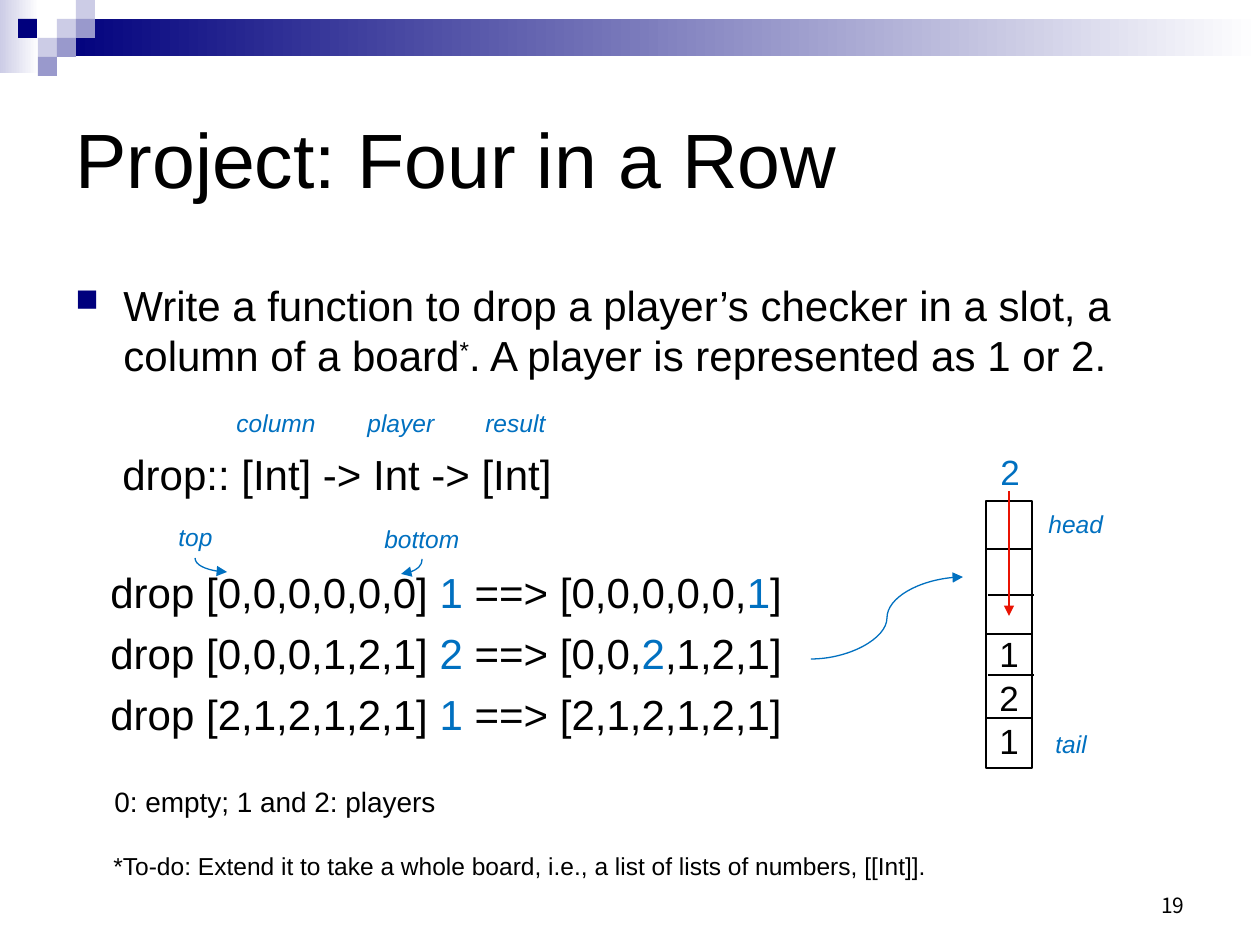
from lxml import etree
from pptx import Presentation
from pptx.dml.color import RGBColor
from pptx.enum import shapes, text
from pptx.oxml import ns
from pptx.util import Pt

PX = 914400 / 126
COLORS = {"ink": "000000", "navy": "00007D", "lilac": "CCCCE6", "violet": "9999CC",
          "white": "FFFFFF", "blue": "0070C0", "red": "E91303"}


def px(*lengths):
    return [round(length * PX) for length in lengths]


def rgb(name):
    return RGBColor.from_string(COLORS[name])


def child(parent, tag, **attributes):
    return etree.SubElement(parent, ns.qn(tag), attributes)


def add_run(paragraph, words, size, color="ink", italic=False, font="Arial"):
    run = paragraph.add_run()
    run.text = words
    run.font.size = Pt(size)
    run.font.name = font
    run.font.italic = italic
    run.font.color.rgb = rgb(color)
    return run


def add_frame(slide, box, anchor=text.MSO_ANCHOR.TOP, wrap=True):
    frame = slide.shapes.add_textbox(*px(*box)).text_frame
    frame.word_wrap = wrap
    frame.vertical_anchor = anchor
    return frame


def add_label(slide, box, words, size=14, color="blue", italic=True):
    frame = add_frame(slide, box, wrap=False)
    add_run(frame.paragraphs[0], words, size, color, italic)


def add_rect(slide, box):
    rect = slide.shapes.add_shape(shapes.MSO_SHAPE.RECTANGLE, *px(*box))
    rect.shadow.inherit = False
    return rect


def add_line(slide, start, end, color="ink", arrow=False, kind=shapes.MSO_CONNECTOR.STRAIGHT):
    line = slide.shapes.add_connector(kind, *px(*start, *end))
    line.line.color.rgb = rgb(color)
    line.line.width = Pt(0.75)
    if arrow:
        child(line.line._get_or_add_ln(), "a:tailEnd", type="triangle")
    child(line.element.spPr, "a:effectLst")
    return line


def add_hook(slide, start, end):
    hook = add_line(slide, start, end, "blue", True, shapes.MSO_CONNECTOR.CURVE)
    across, down = abs(end[0] - start[0]), end[1] - start[1]
    rightward = end[0] > start[0]
    middle = (start[0] + end[0]) / 2, (start[1] + end[1]) / 2
    hook.left, hook.top, hook.width, hook.height = px(
        middle[0] - down / 2, middle[1] - across / 2, down, across)
    xfrm = hook.element.spPr.find(ns.qn("a:xfrm"))
    xfrm.set("rot", str((270 if rightward else 90) * 60000))
    xfrm.set("flipH", "1" if rightward else "0")
    hook.element.spPr.find(ns.qn("a:prstGeom")).set("prst", "curvedConnector2")


def header(slide, box):
    left, top, width, height = box
    bands = [((0, 0, 39, 73), "lilac"), ((57, 19, width - 57, 37), "navy")]
    for (x, y, w, h), color in bands:
        band = add_rect(slide, (left + x, top + y, w, h))
        band.fill.gradient()
        band.fill.gradient_angle = 0
        for stop, shade in zip(band.fill.gradient_stops, (color, "white")):
            stop.color.rgb = rgb(shade)
        band.line.fill.background()
    tiles = [(57, 19, "lilac"), (76, 0, "lilac"), (76, 19, "violet"), (38, 38, "lilac"),
             (18, 19, "navy"), (57, 38, "violet"), (38, 57, "violet")]
    for x, y, color in tiles:
        tile = add_rect(slide, (left + x, top + y, 19, 19))
        tile.fill.solid()
        tile.fill.fore_color.rgb = rgb(color)
        tile.line.fill.background()


def title(slide, box):
    frame = add_frame(slide, box, text.MSO_ANCHOR.MIDDLE)
    add_run(frame.paragraphs[0], "Project: Four in a Row", 44)


def exercise(slide, box):
    frame = add_frame(slide, box)
    rows = [
        (48, 3, 24, [("Write a function to drop a player’s checker in a slot, a column of a board", "ink"),
                     ("*", "ink"), (". A player is represented as 1 or 2.", "ink")]),
        (47, 39, 24, [("drop:: [Int] -> Int -> [Int]", "ink")]),
        (35, 39, 24, [("drop [0,0,0,0,0,0] ", "ink"), ("1", "blue"),
                      (" ==> [0,0,0,0,0,", "ink"), ("1", "blue"), ("]", "ink")]),
        (35, 6, 24, [("drop [0,0,0,1,2,1] ", "ink"), ("2", "blue"),
                     (" ==> [0,0,", "ink"), ("2", "blue"), (",1,2,1]", "ink")]),
        (35, 6, 24, [("drop [2,1,2,1,2,1] ", "ink"), ("1", "blue"),
                     (" ==> [2,1,2,1,2,1]", "ink")]),
        (39, 26, 16, [("0: empty; 1 and 2: players", "ink")]),
    ]
    for index, (indent, before, size, pieces) in enumerate(rows):
        paragraph = frame.add_paragraph() if index else frame.paragraphs[0]
        paragraph.space_before = Pt(before)
        properties = paragraph._p.get_or_add_pPr()
        properties.set("marL", str(px(indent)[0]))
        properties.set("indent", str(px(0 if index else -indent)[0]))
        if index == 0:
            child(child(properties, "a:buClr"), "a:srgbClr", val=COLORS["navy"])
            child(properties, "a:buSzPct", val="75000")
            child(properties, "a:buChar", char="■")
        for words, color in pieces:
            run = add_run(paragraph, words, size, color)
            if words == "*":
                run.font._element.set("baseline", "30000")


def annotations(slide, box):
    left, top = box[:2]
    labels = [("column", 161, 0, 105), ("player", 292, 0, 92), ("result", 410, 0, 86),
              ("top", 103, 114, 59), ("bottom", 309, 116, 101)]
    for words, x, y, width in labels:
        add_label(slide, (left + x, top + y, width, 43), words)
    add_hook(slide, (left + 132, top + 156), (left + 164, top + 170))
    add_hook(slide, (left + 359, top + 157), (left + 338, top + 172))
    add_line(slide, (left + 748, top + 257), (left + 900, top + 175), "blue", True,
             shapes.MSO_CONNECTOR.CURVE)


def slot(slide, box):
    left, top, width, height = box
    column = add_rect(slide, box)
    column.fill.background()
    column.line.color.rgb = rgb("ink")
    column.line.width = Pt(0.75)
    frame = column.text_frame
    frame.word_wrap = False
    frame.vertical_anchor = text.MSO_ANCHOR.BOTTOM
    for index, checker in enumerate("121"):
        paragraph = frame.add_paragraph() if index else frame.paragraphs[0]
        paragraph.alignment = text.PP_ALIGN.CENTER
        paragraph.space_before = Pt(1)
        add_run(paragraph, checker, 20)
    for x, y in [(0, 48), (2, 94), (0, 133), (2, 174), (1, 217)]:
        add_line(slide, (left + x, top + y), (left + x + width, top + y))
    add_label(slide, (left + 2, top - 57, 45, 55), "2", 20, italic=False)
    add_line(slide, (left + 23, top - 10), (left + 23, top + 115), "red", True)
    add_label(slide, (left + 50, top + 2, 81, 43), "head")
    add_label(slide, (left + 57, top + 222, 57, 43), "tail")


def footer(slide, box):
    left, top, width, height = box
    add_label(slide, (left, top, 843, 43),
              "*To-do: Extend it to take a whole board, i.e., a list of lists of numbers, [[Int]].",
              color="ink", italic=False)
    frame = add_frame(slide, (left + width - 294, top + height - 63, 294, 63), text.MSO_ANCHOR.BOTTOM)
    frame.paragraphs[0].alignment = text.PP_ALIGN.RIGHT
    add_run(frame.paragraphs[0], "19", 12, font="Noto Sans CJK KR")


def main():
    deck = Presentation()
    deck.slide_width, deck.slide_height = px(1260, 945)
    slide = deck.slides.add_slide(deck.slide_layouts[6])
    header(slide, (0, 0, 1260, 76))
    title(slide, (63, 63, 1134, 189))
    exercise(slide, (63, 273, 1150, 561))
    annotations(slide, (63, 402, 900, 260))
    slot(slide, (986, 501, 46, 267))
    footer(slide, (101, 845, 1096, 79))
    deck.save("out.pptx")


if __name__ == "__main__":
    main()
